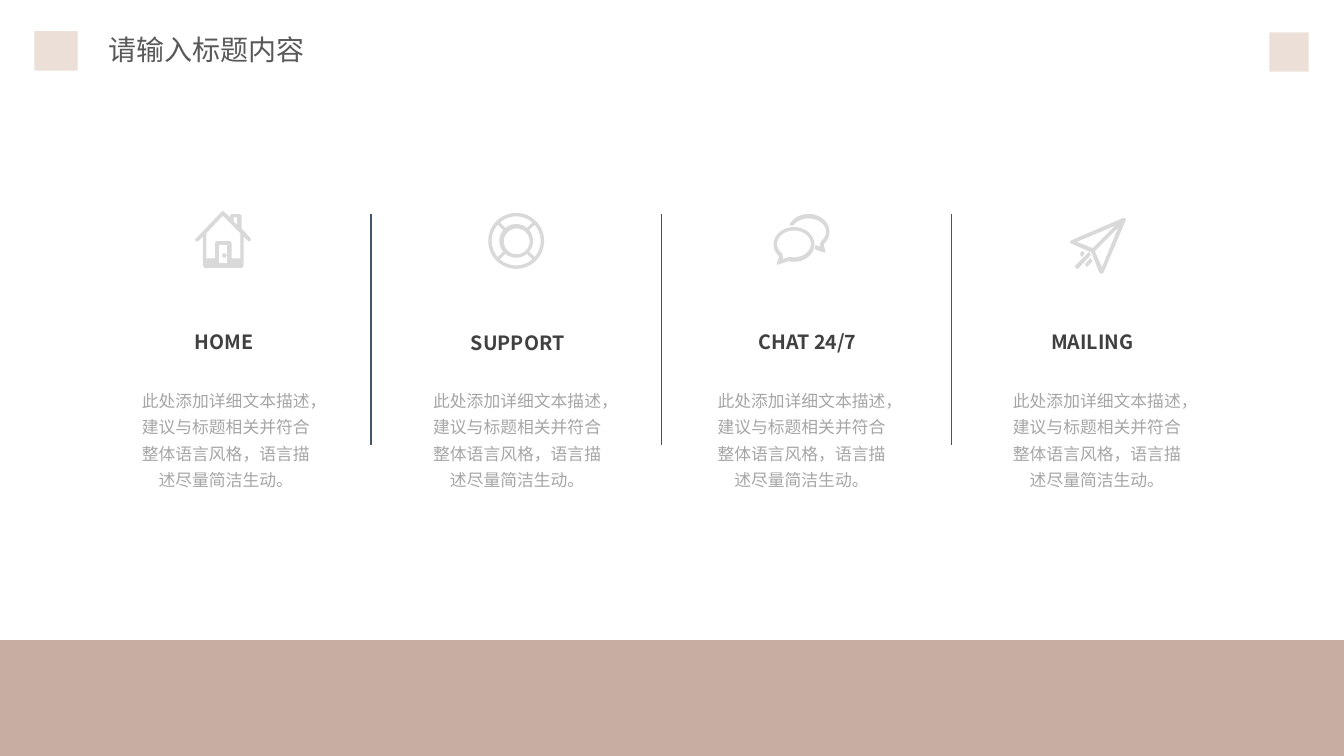
from dataclasses import dataclass
from math import cos, radians, sin

from lxml import etree
from pptx import Presentation
from pptx.dml.color import RGBColor
from pptx.enum.shapes import MSO_CONNECTOR, MSO_SHAPE
from pptx.enum.text import MSO_ANCHOR, MSO_AUTO_SIZE, PP_ALIGN
from pptx.oxml.ns import qn
from pptx.slide import Slide
from pptx.util import Pt

RECT = MSO_SHAPE.RECTANGLE
LINE = MSO_CONNECTOR.STRAIGHT
MIDDLE, TOP = MSO_ANCHOR.MIDDLE, MSO_ANCHOR.TOP
CENTER, LEFT = PP_ALIGN.CENTER, PP_ALIGN.LEFT
FIT = MSO_AUTO_SIZE.SHAPE_TO_FIT_TEXT
PX = 9144  # EMU in one px, 100 px to the inch
WIDE, HIGH = 1333, 750


@dataclass(frozen=True)
class Theme:
    font: str = "Noto Sans CJK SC"
    band: str = "C6AEA3"
    block: str = "ECDFD8"
    rule: str = "44546A"
    icon: str = "D9D9D9"
    title: str = "595959"
    label: str = "404040"
    body: str = "A6A6A6"
    title_size: int = 20
    label_size: int = 14
    body_size: int = 12
    spacing: float = 1.3
    stroke: int = 1


@dataclass(frozen=True)
class Box:
    x: int
    y: int
    w: int
    h: int


@dataclass(frozen=True)
class Style:
    color: str
    size: int
    bold: bool = False
    wrap: bool = True
    align: PP_ALIGN = CENTER
    anchor: MSO_ANCHOR = TOP
    spacing: float | None = None


@dataclass(frozen=True)
class Arc:
    """Part of the ellipse inside a box; degrees run clockwise from the right."""
    left: int
    top: int
    right: int
    bottom: int
    start: int = 0
    end: int = 360

    def points(self) -> list[tuple[float, float]]:
        rx, ry = (self.right - self.left) / 2, (self.bottom - self.top) / 2
        count = max(8, abs(self.end - self.start) // 6)
        turns = [radians(self.start + (self.end - self.start) * i / count)
                 for i in range(count + 1)]
        return [(self.left + rx + rx * cos(t), self.top + ry + ry * sin(t)) for t in turns]


Icon = list[list[tuple[int, int] | Arc]]


@dataclass(frozen=True)
class Column:
    name: str
    label: Box
    body_x: int
    icon_x: int
    icon_y: int
    icon: Icon


THEME = Theme()
TITLE = Style(THEME.title, THEME.title_size, align=LEFT)
LABEL = Style(THEME.label, THEME.label_size, bold=True, wrap=False, anchor=MIDDLE)
BODY = Style(THEME.body, THEME.body_size, spacing=THEME.spacing)
DETAIL = "此处添加详细文本描述，建议与标题相关并符合整体语言风格，语言描述尽量简洁生动。"

HOUSE: Icon = [
    [(54, 27), (45, 17), (45, 4), (43, 3), (36, 3), (35, 4), (35, 7), (28, 1), (27, 0),
     (26, 1), (1, 27), (0, 28), (2, 29), (8, 23), (8, 53), (9, 55), (46, 55), (47, 53),
     (47, 23), (52, 28), (53, 29), (54, 28)],
    [(45, 47), (35, 47), (35, 31), (34, 30), (21, 30), (20, 31), (20, 47), (10, 47),
     (10, 21), (27, 3), (45, 21)],
    [(45, 52), (35, 52), (35, 50), (45, 50)],
    [(32, 52), (23, 52), (23, 32), (32, 32)],
    [(20, 52), (10, 52), (10, 50), (20, 50)],
    [(37, 5), (42, 5), (42, 15), (37, 10)],
    [Arc(27, 42, 30, 45)],
]
BUOY: Icon = [[Arc(0, 0, 54, 54)], [Arc(14, 14, 41, 41)]] + [
    [Arc(2, 2, 52, 52, mid - 43, mid + 43), Arc(11, 11, 43, 43, mid + 42, mid - 42)]
    for mid in range(0, 360, 90)
]
CHAT: Icon = [
    [Arc(2, 15, 37, 43, 135, 465), (7, 45), (8, 42)],
    [Arc(0, 13, 39, 46, 135, 466), (3, 49)],
    [Arc(14, 0, 54, 34, 204, 405), (50, 37), (41, 34), (41, 31), (47, 33), (46, 30),
     Arc(16, 3, 52, 31, 405, 211)],
]
PLANE: Icon = [
    [(54, 1), (53, 0), (52, 0), (1, 22), (0, 23), (1, 24), (21, 33), (29, 53), (31, 54),
     (32, 53)],
    [(31, 50), (23, 32), (49, 6)],
    [(4, 23), (47, 5), (22, 30)],
    [(19, 40), (19, 41), (15, 45), (16, 47), (17, 46), (20, 43), (21, 42)],
    [(19, 36), (18, 34), (17, 35), (5, 47), (6, 49), (7, 49)],
    [(12, 36), (13, 34), (12, 33), (11, 33), (10, 35), (11, 37)],
]
COLUMNS = [
    Column("HOME", Box(180, 322, 84, 34), 127, 194, 210, HOUSE),
    Column("SUPPORT", Box(456, 323, 115, 34), 416, 485, 212, BUOY),
    Column("CHAT 24/7", Box(738, 322, 126, 34), 698, 768, 213, CHAT),
    Column("MAILING", Box(1028, 322, 111, 34), 991, 1062, 217, PLANE),
]
BLOCKS = [
    (Box(0, 635, WIDE, 115), THEME.band),
    (Box(34, 31, 43, 39), THEME.block),
    (Box(1259, 32, 39, 39), THEME.block),
]


def scale(box: Box) -> tuple[int, int, int, int]:
    return box.x * PX, box.y * PX, box.w * PX, box.h * PX


def add_block(slide: Slide, box: Box, color: str) -> None:
    block = slide.shapes.add_shape(RECT, *scale(box))
    block.shadow.inherit = False
    block.fill.solid()
    block.fill.fore_color.rgb = RGBColor.from_string(color)
    block.line.fill.background()


def add_text(slide: Slide, box: Box, text: str, style: Style) -> None:
    frame = slide.shapes.add_textbox(*scale(box)).text_frame
    frame.text = text
    frame.word_wrap = style.wrap
    frame.auto_size = FIT
    frame.vertical_anchor = style.anchor
    para = frame.paragraphs[0]
    para.alignment = style.align
    para.line_spacing = style.spacing
    font = para.runs[0].font
    font.size = Pt(style.size)
    font.bold = style.bold
    font.color.rgb = RGBColor.from_string(style.color)
    font.name = THEME.font
    props = para.runs[0]._r.get_or_add_rPr()
    etree.SubElement(props, qn("a:ea")).set("typeface", THEME.font)


def add_rule(slide: Slide, x: int, top: int, end: int) -> None:
    rule = slide.shapes.add_connector(LINE, x * PX, top * PX, x * PX, end * PX)
    rule.line.color.rgb = RGBColor.from_string(THEME.rule)
    rule.line.width = Pt(THEME.stroke)
    etree.SubElement(rule._element.spPr, qn("a:effectLst"))


def add_icon(slide: Slide, x: int, y: int, icon: Icon) -> None:
    """Draw all outlines as one shape, so that inner ones become holes."""
    outlines = []
    for parts in icon:
        spots = [spot for part in parts
                 for spot in (part.points() if isinstance(part, Arc) else [part])]
        outlines.append([(round((x + a) * PX), round((y + b) * PX)) for a, b in spots])
    pen = slide.shapes.build_freeform(*outlines[0][0])
    for spots in outlines:
        pen.move_to(*spots[0])
        pen.add_line_segments(spots[1:], close=True)
    shape = pen.convert_to_shape()
    shape.shadow.inherit = False
    shape.fill.solid()
    shape.fill.fore_color.rgb = RGBColor.from_string(THEME.icon)
    shape.line.color.rgb = RGBColor.from_string(THEME.icon)
    shape.line.width = Pt(THEME.stroke)


def main() -> None:
    deck = Presentation()
    deck.slide_width, deck.slide_height = WIDE * PX, HIGH * PX
    slide = deck.slides.add_slide(deck.slide_layouts[6])
    for x in range(368, 945, 288):
        add_rule(slide, x, 212, 441)
    for col in COLUMNS:
        add_icon(slide, col.icon_x, col.icon_y, col.icon)
        add_text(slide, col.label, col.name, LABEL)
        add_text(slide, Box(col.body_x, 377, 194, 115), DETAIL, BODY)
    for box, color in BLOCKS:
        add_block(slide, box, color)
    add_text(slide, Box(98, 27, 356, 44), "请输入标题内容", TITLE)
    deck.save("out.pptx")


if __name__ == "__main__":
    main()
